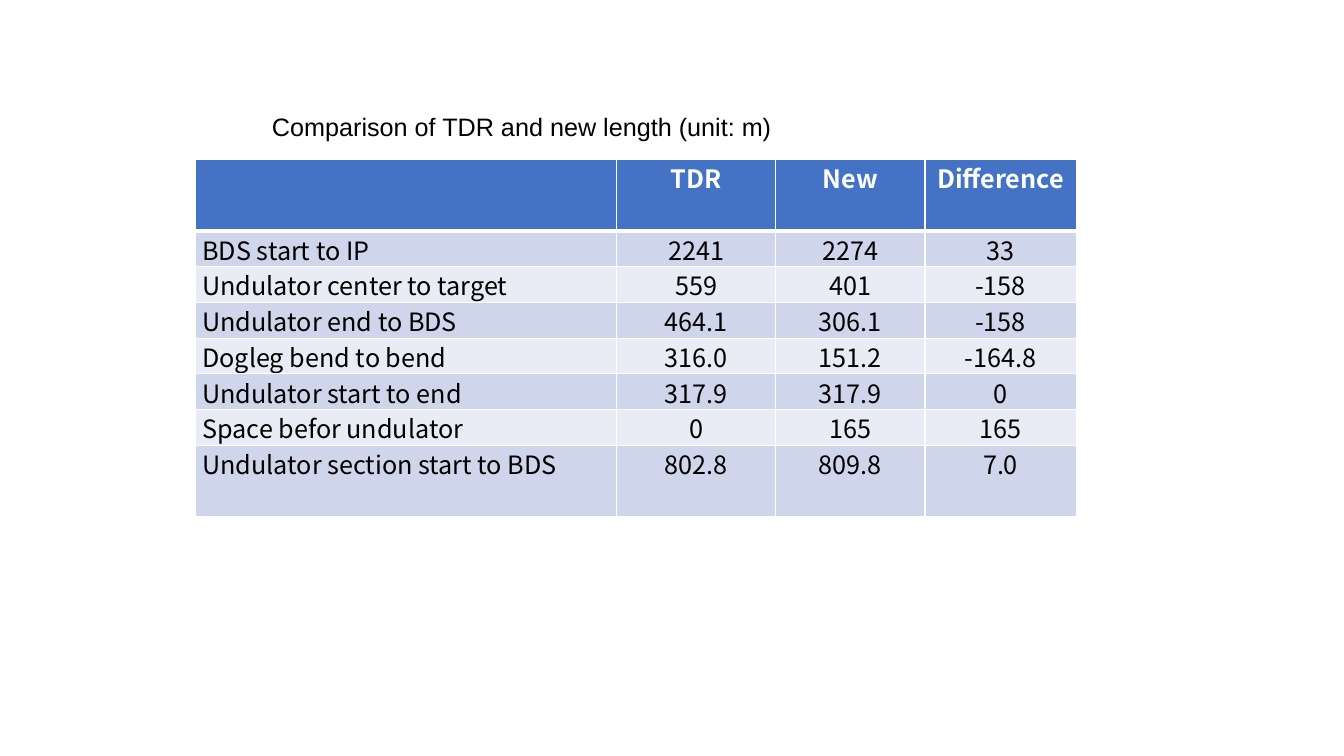
from dataclasses import dataclass

import lxml.etree
import pptx
import pptx.dml.color
import pptx.enum.text
import pptx.oxml.ns
import pptx.table
import pptx.text.text
import pptx.util

Cm = pptx.util.Cm
Align = pptx.enum.text.PP_ALIGN

TABLE_FONT = "Noto Sans CJK JP"
TEXT_SIZE = 18
WHITE, BLACK, HEADER_BLUE = "FFFFFF", "000000", "4472C4"
BANDS = ("CFD5EA", "E9EBF5")
COLUMN_WIDTHS = (10.62, 4.01, 3.76, 3.81)
ROW_HEIGHT, TALL_ROW_HEIGHT = 0.9, 1.8


@dataclass
class LengthRow:
    label: str
    tdr: str
    new: str
    difference: str


HEADER = LengthRow("", "TDR", "New", "Difference")
LENGTHS = [
    LengthRow("BDS start to IP", "2241", "2274", "33"),
    LengthRow("Undulator center to target", "559", "401", "-158"),
    LengthRow("Undulator end to BDS", "464.1", "306.1", "-158"),
    LengthRow("Dogleg bend to bend", "316.0", "151.2", "-164.8"),
    LengthRow("Undulator start to end", "317.9", "317.9", "0"),
    LengthRow("Space befor undulator", "0", "165", "165"),
    LengthRow("Undulator section start to BDS", "802.8", "809.8", "7.0"),
]


def color(code: str) -> pptx.dml.color.RGBColor:
    return pptx.dml.color.RGBColor.from_string(code)


def write(para: pptx.text.text._Paragraph, text: str, font: str, code: str,
          align: Align, bold: bool = False) -> None:
    para.alignment = align
    para.font.size = pptx.util.Pt(TEXT_SIZE)
    if text:
        span = para.add_run()
        span.text = text
        span.font.name = font
        span.font.size = pptx.util.Pt(TEXT_SIZE)
        span.font.bold = bold
        span.font.color.rgb = color(code)


def add_borders(cell: pptx.table._Cell, top: int, bottom: int) -> None:
    """Draw white borders; widths are in points."""
    qn = pptx.oxml.ns.qn
    properties = cell._tc.get_or_add_tcPr()
    for side, width in (("L", 1), ("R", 1), ("T", top), ("B", bottom)):
        line = lxml.etree.SubElement(properties, qn(f"a:ln{side}"), w=str(pptx.util.Pt(width)))
        fill = lxml.etree.SubElement(line, qn("a:solidFill"))
        lxml.etree.SubElement(fill, qn("a:srgbClr"), val=WHITE)


def fill_row(table: pptx.table.Table, index: int, row: LengthRow) -> None:
    is_header = index == 0
    band = HEADER_BLUE if is_header else BANDS[(index - 1) % 2]
    for column, text in enumerate((row.label, row.tdr, row.new, row.difference)):
        cell = table.cell(index, column)
        cell.margin_left = cell.margin_right = Cm(0.18)
        cell.margin_top = cell.margin_bottom = 0
        add_borders(cell, top=3 if index == 1 else 1, bottom=3 if is_header else 1)
        cell.fill.solid()
        cell.fill.fore_color.rgb = color(band)
        write(cell.text_frame.paragraphs[0], text, TABLE_FONT,
              WHITE if is_header else BLACK,
              Align.CENTER if column else Align.JUSTIFY, bold=is_header)


def main() -> None:
    deck = pptx.Presentation()
    deck.slide_width, deck.slide_height = Cm(33.87), Cm(19.05)
    page = deck.slides.add_slide(deck.slide_layouts.get_by_name("Title Only"))

    # Title
    box = page.shapes.title
    box.left, box.top, box.width, box.height = Cm(6.6), Cm(2.67), Cm(16.36), Cm(1.02)
    frame = box.text_frame
    frame.word_wrap = True
    frame.auto_size = pptx.enum.text.MSO_AUTO_SIZE.SHAPE_TO_FIT_TEXT
    frame.vertical_anchor = pptx.enum.text.MSO_ANCHOR.MIDDLE
    write(frame.paragraphs[0], "Comparison of TDR and new length (unit: m)",
          "Arial", BLACK, Align.LEFT)

    # Length table
    rows = [HEADER, *LENGTHS]
    heights = [TALL_ROW_HEIGHT, *[ROW_HEIGHT] * (len(rows) - 2), TALL_ROW_HEIGHT]
    table = page.shapes.add_table(
        len(rows), len(COLUMN_WIDTHS), Cm(4.92), Cm(4.02),
        Cm(sum(COLUMN_WIDTHS)), Cm(sum(heights))).table
    table.horz_banding = False
    for column, width in zip(table.columns, COLUMN_WIDTHS):
        column.width = Cm(width)
    for index, (row, height) in enumerate(zip(rows, heights)):
        table.rows[index].height = Cm(height)
        fill_row(table, index, row)

    deck.save("out.pptx")


if __name__ == "__main__":
    main()
